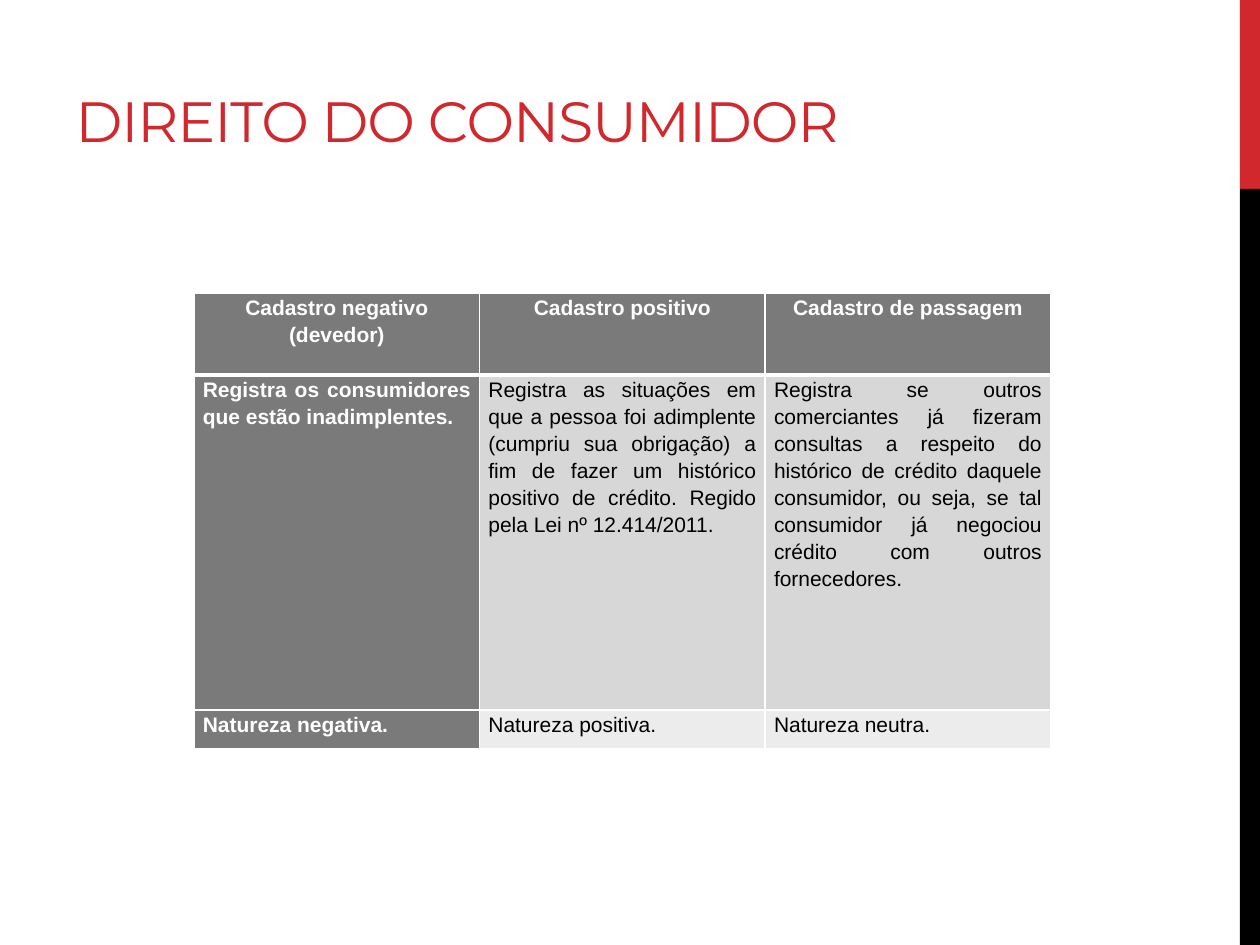
from lxml import etree
from pptx import Presentation
from pptx import util as u
from pptx.dml import color
from pptx.enum import shapes, text
from pptx.oxml import ns

WIDE, HIGH = 10, 7.5
RED, BLACK, WHITE, GREY = "D1282E", "000000", "FFFFFF", "7A7A7A"
BANDS = [GREY, "D7D7D7", "ECECEC"]
ROWS = [0.65, 2.66, 0.31]
CELLS = [
    ["Cadastro negativo (devedor)", "Cadastro positivo", "Cadastro de passagem"],
    ["Registra os consumidores que estão inadimplentes.",
     "Registra as situações em que a pessoa foi adimplente (cumpriu sua obrigação) "
     "a fim de fazer um histórico positivo de crédito. Regido pela Lei nº 12.414/2011.",
     "Registra se outros comerciantes já fizeram consultas a respeito do histórico de "
     "crédito daquele consumidor, ou seja, se tal consumidor já negociou crédito com "
     "outros fornecedores."],
    ["Natureza negativa.", "Natureza positiva.", "Natureza neutra."],
]


def paint(fmt, hue):
    """Give a fill a solid colour from a hex string."""
    fmt.solid()
    fmt.fore_color.rgb = color.RGBColor.from_string(hue)


def apply(item, form):
    """Set each attribute of an item from a dict of values."""
    for name, val in form.items():
        setattr(item, name, val)


def place(box):
    """Turn a box in inches into a dict of shape lengths."""
    return dict(zip(("left", "top", "width", "height"), map(u.Inches, box)))


def write(frame, words, hue, para, font):
    """Put one formatted run of text into a frame."""
    line = frame.paragraphs[0]
    apply(line, para)
    run = line.add_run()
    run.text = words
    apply(run.font, font)
    paint(run.font.fill, hue)
    return run


def edge(cell, sides):
    """Draw white cell borders with the given width in points per side."""
    props = cell._tc.get_or_add_tcPr()
    for spot, (side, wide) in enumerate(sides.items()):
        line = etree.Element(ns.qn(f"a:ln{side}"), w=str(u.Pt(wide)))
        fill = etree.SubElement(line, ns.qn("a:solidFill"))
        etree.SubElement(fill, ns.qn("a:srgbClr"), val=WHITE)
        props.insert(spot, line)


def side_bar(slide, box):
    """Stack a red fifth over a black rest in the box."""
    left, top, width, height = box
    cut = height / 5
    for hue, start, tall in ((RED, top, cut), (BLACK, top + cut, height - cut)):
        spot = place((left, start, width, tall))
        bar = slide.shapes.add_shape(shapes.MSO_SHAPE.RECTANGLE, **spot)
        bar.shadow.inherit = False
        paint(bar.fill, hue)
        bar.line.fill.background()


def heading(slide, box):
    """Move and format the title placeholder."""
    title = slide.shapes.title
    apply(title, place(box))
    apply(title.text_frame, {"vertical_anchor": text.MSO_ANCHOR.BOTTOM,
                             "auto_size": text.MSO_AUTO_SIZE.NONE,
                             "word_wrap": True})
    run = write(title.text_frame, "DIREITO DO CONSUMIDOR", RED,
                {"alignment": text.PP_ALIGN.LEFT},
                {"name": "Montserrat", "size": u.Pt(32.4)})
    run._r.get_or_add_rPr().set("spc", "-60")


def grid(slide, box):
    """Fill the box with the table of credit records."""
    count = len(CELLS[0])
    table = slide.shapes.add_table(len(CELLS), count, **place(box)).table
    for col in table.columns:
        col.width = u.Inches(box[2] / count)
    for r, tall in enumerate(ROWS):
        table.rows[r].height = u.Inches(tall)
        for c, words in enumerate(CELLS[r]):
            cell, head = table.cell(r, c), r == 0 or c == 0
            apply(cell, {"margin_left": u.Inches(0.07), "margin_right": u.Inches(0.07),
                         "margin_top": 0, "margin_bottom": 0})
            paint(cell.fill, GREY if head else BANDS[r])
            align = text.PP_ALIGN.JUSTIFY if r else text.PP_ALIGN.CENTER
            write(cell.text_frame, words, WHITE if head else BLACK,
                  {"alignment": align, "line_spacing": 1.15},
                  {"name": "Arial", "size": u.Pt(12), "bold": head})
            edge(cell, {"L": 1, "R": 1, "T": 3 if r == 1 else 1, "B": 1 if r else 3})


def main():
    """Build the slide and save it."""
    deck = Presentation()
    apply(deck, {"slide_width": u.Inches(WIDE), "slide_height": u.Inches(HIGH)})
    slide = deck.slides.add_slide(deck.slide_layouts[5])
    side_bar(slide, (WIDE * 0.984, 0, WIDE * 0.016, HIGH))
    heading(slide, (WIDE * 0.05, HIGH * 0.08, WIDE * 0.883, HIGH * 0.09))
    grid(slide, (WIDE * 0.154, HIGH * 0.31, WIDE * 0.68, sum(ROWS)))
    deck.save("out.pptx")


if __name__ == "__main__":
    main()
